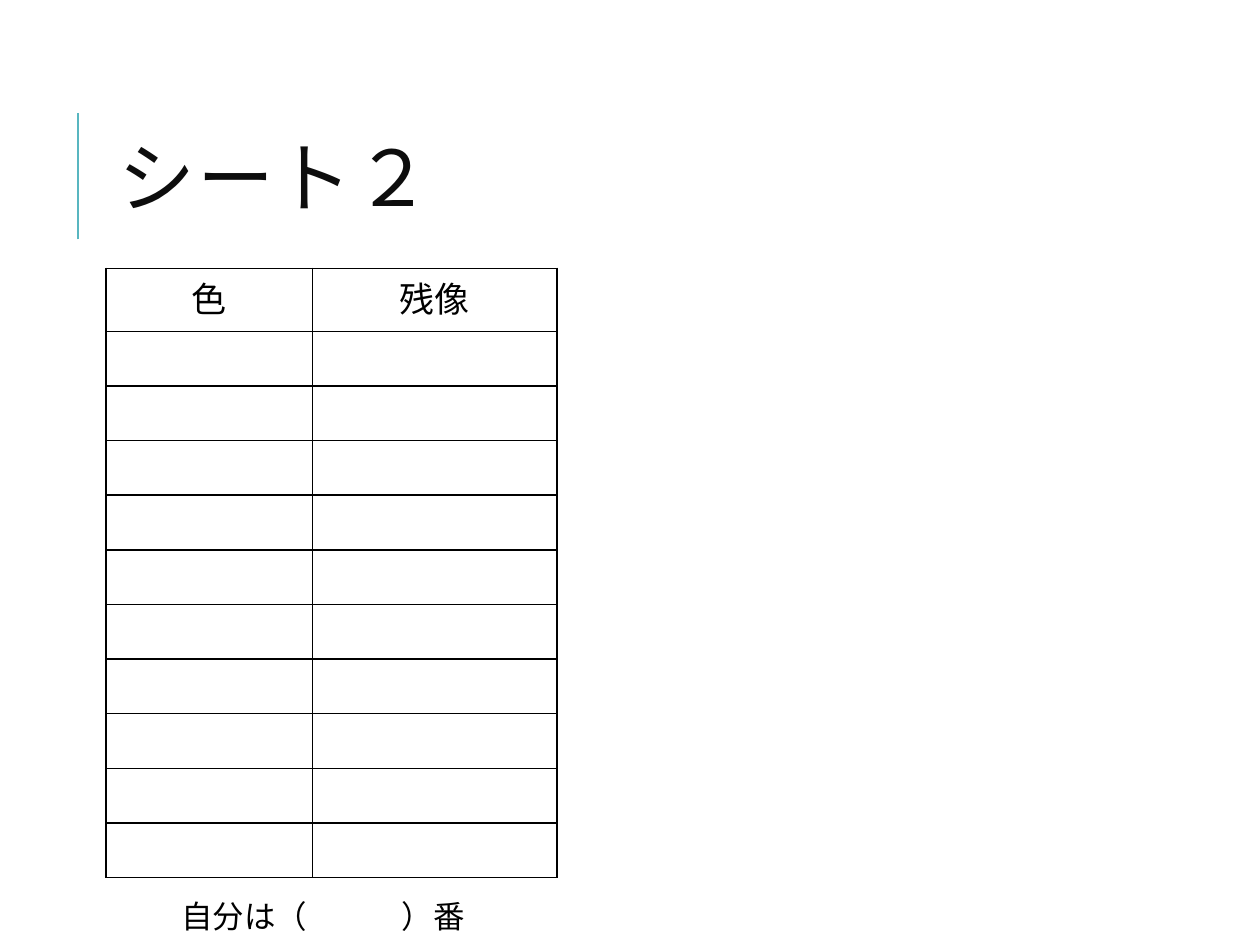
from lxml import etree
from pptx import Presentation
from pptx.dml.color import RGBColor
from pptx.enum.shapes import MSO_CONNECTOR as Connector
from pptx.enum.text import MSO_ANCHOR as Anchor, MSO_AUTO_SIZE as AutoSize, PP_ALIGN as Align
from pptx.oxml import parse_xml
from pptx.oxml.ns import nsdecls, qn
from pptx.util import Inches, Pt

COLORS = {"accent": "58B6C0", "title": "0D0D0D", "ink": "000000"}
HEADINGS = ["色", "残像"]
COLUMN_WIDTHS = [1.64, 1.94]
ROW_COUNT = 11
LEFT, TABLE_TOP, TABLE_HEIGHT, HEADER_HEIGHT = 0.84, 2.13, 4.77, 0.5


def style(para, size, font, color):
    for span in para.runs:
        span.font.size = Pt(size)
        span.font.name = font
        span.font.color.rgb = RGBColor.from_string(COLORS[color])
        east_asian = etree.SubElement(span.font._element, qn("a:ea"))
        east_asian.set("typeface", font)


deck = Presentation()
deck.slide_width, deck.slide_height = Inches(10), Inches(7.5)
page = deck.slides.add_slide(deck.slide_layouts[5])

rule = page.shapes.add_connector(
    Connector.STRAIGHT, Inches(0.62), Inches(1.9), Inches(0.62), Inches(0.9)
)
rule.line.color.rgb = RGBColor.from_string(COLORS["accent"])
rule.line.width = Pt(1.5)
etree.SubElement(rule._element.spPr, qn("a:effectLst"))

title = page.shapes.title
title.left, title.top = Inches(LEFT), Inches(0.64)
title.width, title.height = Inches(9.02), Inches(1.64)
title.text_frame.text = "シート２"
title.text_frame.vertical_anchor = Anchor.MIDDLE
title.text_frame.auto_size = AutoSize.NONE
para = title.text_frame.paragraphs[0]
para.alignment = Align.LEFT
para.line_spacing = 0.8
style(para, 44, "Calibri", "title")
para.runs[0].font._element.set("spc", "100")

frame = page.shapes.add_table(
    ROW_COUNT, len(HEADINGS), Inches(LEFT), Inches(TABLE_TOP),
    Inches(sum(COLUMN_WIDTHS)), Inches(TABLE_HEIGHT),
)
table = frame.table
table.first_row = table.horz_banding = False
table.rows[0].height = Inches(HEADER_HEIGHT)
for column, width in zip(table.columns, COLUMN_WIDTHS):
    column.width = Inches(width)
for cell in table.iter_cells():
    properties = cell._tc.get_or_add_tcPr()
    for side in ("lnL", "lnR", "lnT", "lnB"):
        properties.append(parse_xml(
            f'<a:{side} {nsdecls("a")} w="{Pt(1)}"><a:solidFill>'
            f'<a:srgbClr val="{COLORS["ink"]}"/></a:solidFill></a:{side}>'
        ))
    cell.fill.background()
for cell, heading in zip(table.rows[0].cells, HEADINGS):
    cell.text_frame.text = heading
    cell.vertical_anchor = Anchor.MIDDLE
    para = cell.text_frame.paragraphs[0]
    para.alignment = Align.CENTER
    style(para, 20, "Cabin", "ink")

box = page.shapes.add_textbox(Inches(1.34), Inches(7.07), Inches(2.47), Inches(0.4))
box.text_frame.word_wrap = False
box.text_frame.auto_size = AutoSize.SHAPE_TO_FIT_TEXT
box.text_frame.text = "自分は（　　　）番"
style(box.text_frame.paragraphs[0], 18, "Cabin", "ink")

deck.save("out.pptx")
